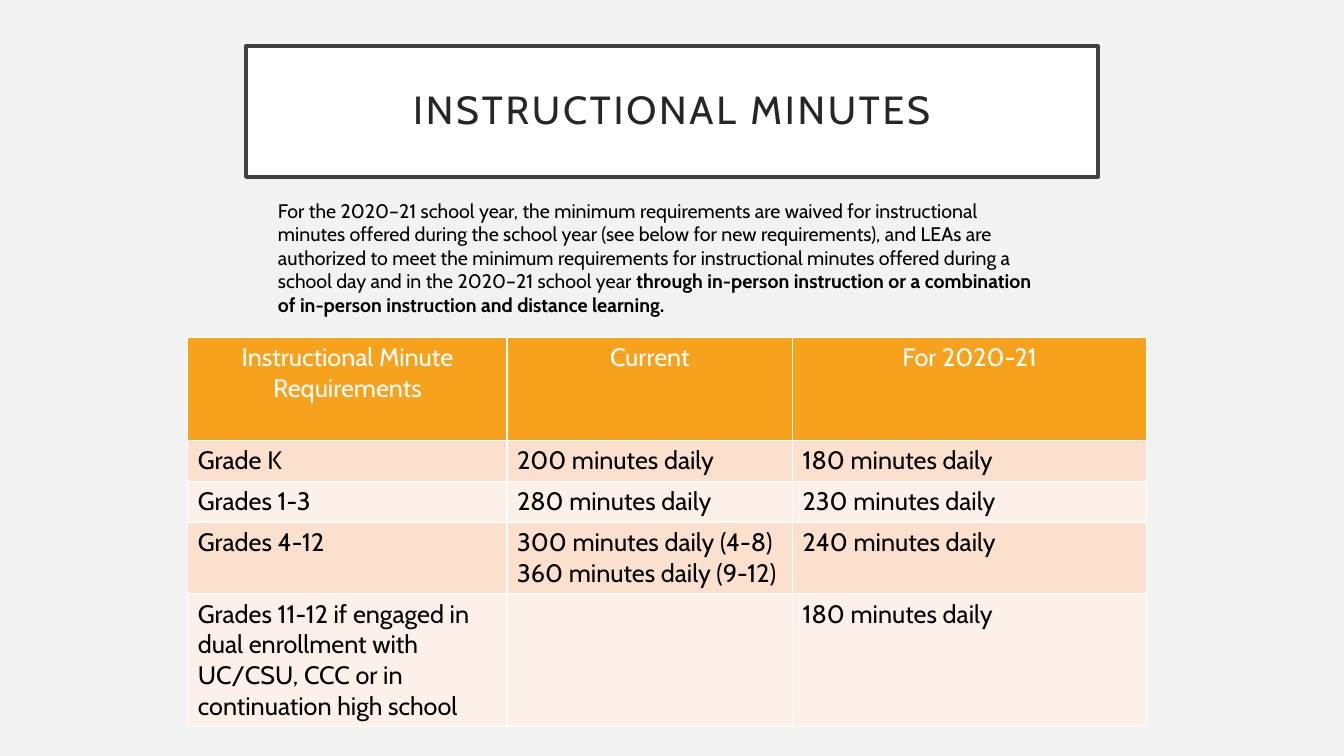
from pptx import Presentation
from pptx.dml.color import RGBColor
from pptx.enum.shapes import MSO_SHAPE
from pptx.enum.text import MSO_ANCHOR, MSO_AUTO_SIZE, PP_ALIGN
from pptx.oxml import parse_xml
from pptx.oxml.ns import nsdecls
from pptx.util import Pt

TITLE = "INSTRUCTIONAL MINUTES"
INTRO = [
    ("For the 2020–21 school year, the minimum requirements are waived for "
     "instructional minutes offered during the school year (see below for new "
     "requirements), and LEAs are authorized to meet the minimum requirements "
     "for instructional minutes offered during a school day and in the "
     "2020–21 school year ", False),
    ("through in-person instruction or a combination of in-person "
     "instruction and distance learning.", True),
]
ROWS = [
    ("Instructional Minute Requirements", "Current", "For 2020-21"),
    ("Grade K", "200 minutes daily", "180 minutes daily"),
    ("Grades 1-3", "280 minutes daily", "230 minutes daily"),
    ("Grades 4-12", "300 minutes daily (4-8)\n360 minutes daily (9-12)",
     "240 minutes daily"),
    ("Grades 11-12 if engaged in dual enrollment with UC/CSU, CCC or in "
     "continuation high school", "", "180 minutes daily"),
]
WIDTHS = [228, 204, 253]
HEIGHTS = [73.5, 29.2, 29.2, 51.2, 95]
FONT = "Cabin"
COLORS = {
    "page": "F2F2F2", "white": "FFFFFF", "frame": "404040", "title": "262626",
    "text": "000000", "head": "F6A21D", "odd": "FBE0CD", "even": "FDF0E8",
}


def color(name):
    """Return the named colour."""
    return RGBColor.from_string(COLORS[name])


def paint(fill, name):
    """Fill with one solid colour."""
    fill.solid()
    fill.fore_color.rgb = color(name)


def style(run, size, name, bold=False):
    """Set the font of a run."""
    font = run.font
    font.name, font.size, font.bold = FONT, Pt(size), bold
    font.color.rgb = color(name)


def add_title(slide):
    """Add the framed title."""
    box = slide.shapes.add_shape(
        MSO_SHAPE.RECTANGLE, Pt(175.7), Pt(33), Pt(608.6), Pt(93.5))
    box.shadow.inherit = False
    paint(box.fill, "white")
    box.line.color.rgb = color("frame")
    box.line.width = Pt(2.5)
    frame = box.text_frame
    frame.word_wrap = True
    frame.vertical_anchor = MSO_ANCHOR.MIDDLE
    frame.margin_left = frame.margin_right = Pt(14.4)
    frame.margin_top = frame.margin_bottom = Pt(14.4)
    frame.text = TITLE
    para = frame.paragraphs[0]
    para.alignment = PP_ALIGN.CENTER
    para.line_spacing = 0.9
    run = para.runs[0]
    style(run, 28, "title")
    run.font._element.set("spc", "200")


def add_intro(slide):
    """Add the paragraph below the title."""
    box = slide.shapes.add_textbox(Pt(191.5), Pt(138.2), Pt(556), Pt(108.7))
    frame = box.text_frame
    frame.word_wrap = True
    frame.auto_size = MSO_AUTO_SIZE.SHAPE_TO_FIT_TEXT
    for text, bold in INTRO:
        run = frame.paragraphs[0].add_run()
        run.text = text
        style(run, 14, "text", bold)


def add_edges(cell):
    """Draw thin white borders around a cell."""
    props = cell._tc.get_or_add_tcPr()
    for side in "LRTB":
        props.append(parse_xml(
            f'<a:ln{side} {nsdecls("a")} w="{Pt(1)}"><a:solidFill>'
            f'<a:srgbClr val="{COLORS["white"]}"/></a:solidFill></a:ln{side}>'))


def add_grid(slide):
    """Add the table of minutes."""
    grid = slide.shapes.add_table(
        len(ROWS), len(WIDTHS), Pt(134.2), Pt(241),
        Pt(sum(WIDTHS)), Pt(sum(HEIGHTS))).table
    for col, width in zip(grid.columns, WIDTHS):
        col.width = Pt(width)
    for r, (row, height) in enumerate(zip(ROWS, HEIGHTS)):
        grid.rows[r].height = Pt(height)
        band = "head" if r == 0 else "odd" if r % 2 else "even"
        for c, text in enumerate(row):
            cell = grid.cell(r, c)
            add_edges(cell)
            paint(cell.fill, band)
            cell.text_frame.text = text
            for para in cell.text_frame.paragraphs:
                para.alignment = PP_ALIGN.LEFT if r else PP_ALIGN.CENTER
                for run in para.runs:
                    style(run, 18, "text" if r else "white")


def main():
    """Build and save the slide."""
    deck = Presentation()
    deck.slide_width, deck.slide_height = Pt(960), Pt(540)
    slide = deck.slides.add_slide(deck.slide_layouts[6])
    paint(slide.background.fill, "page")
    add_title(slide)
    add_grid(slide)
    add_intro(slide)
    deck.save("out.pptx")


if __name__ == "__main__":
    main()
